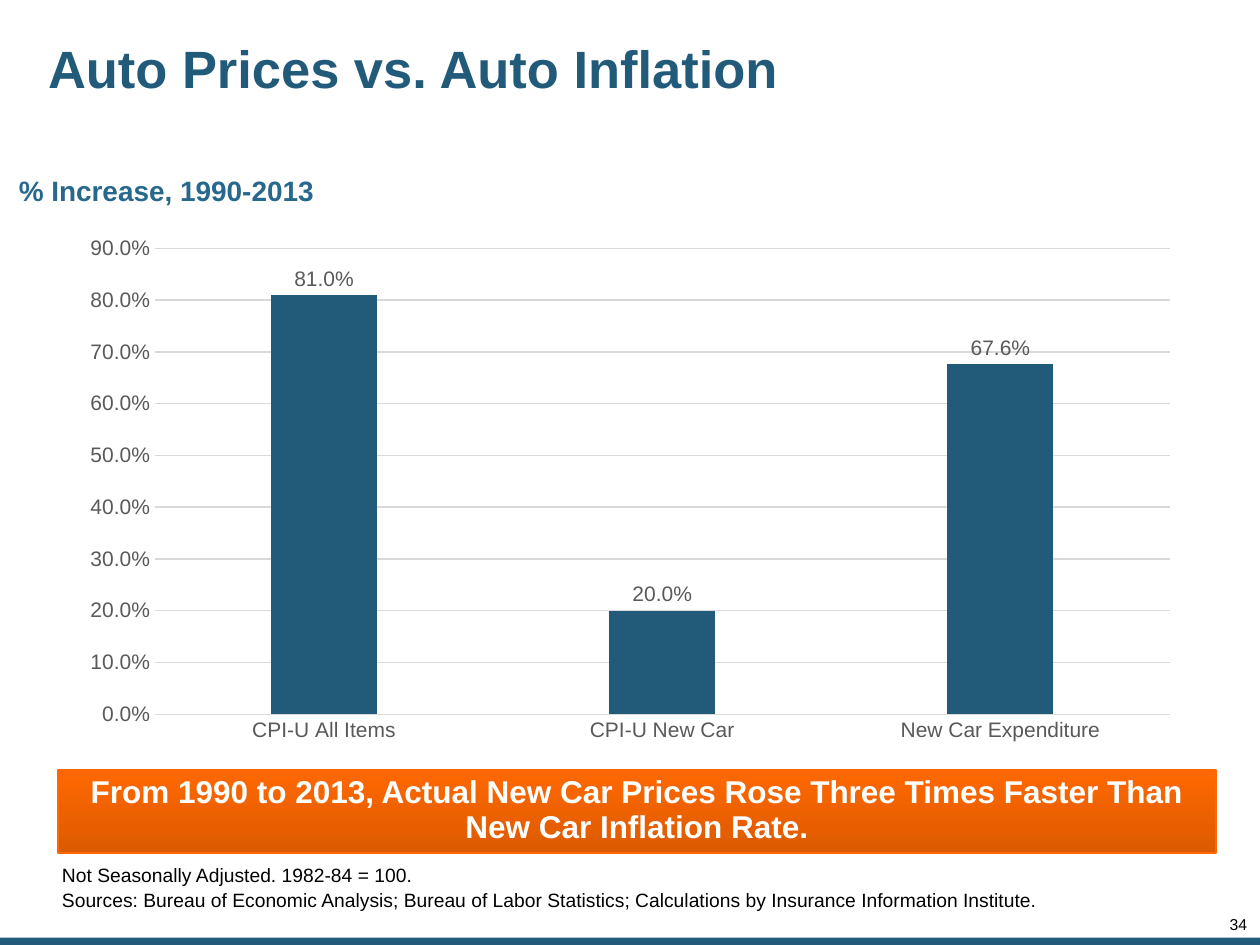
from lxml import etree
from pptx import Presentation
from pptx.chart.data import CategoryChartData
from pptx.dml.color import RGBColor
from pptx.enum.chart import XL_CHART_TYPE, XL_LABEL_POSITION, XL_TICK_MARK
from pptx.enum.shapes import MSO_SHAPE
from pptx.enum.text import MSO_ANCHOR, PP_ALIGN
from pptx.util import Cm, Pt

COLUMNS = XL_CHART_TYPE.COLUMN_CLUSTERED
OUTSIDE = XL_LABEL_POSITION.OUTSIDE_END
NO_TICK = XL_TICK_MARK.NONE
RECTANGLE = MSO_SHAPE.RECTANGLE
TOP, MIDDLE, BOTTOM = MSO_ANCHOR.TOP, MSO_ANCHOR.MIDDLE, MSO_ANCHOR.BOTTOM
LEFT, CENTER, RIGHT = PP_ALIGN.LEFT, PP_ALIGN.CENTER, PP_ALIGN.RIGHT

FONT = "Arial"
BLUE, GRAY, RULE = "225A7A", "595959", "D9D9D9"
ORANGE, DARK_ORANGE = "FF6801", "DC5A01"
PERCENT = "0.0%"

INCREASES = {"CPI-U All Items": 0.81, "CPI-U New Car": 0.2, "New Car Expenditure": 0.676}
CHART_AREA = (1.37, 4.57, 22.66, 10.59)
FOOTER_AREA = (0, 18.9, 25.4, 0.15)
BANNER_AREA = (1.17, 15.52, 23.34, 1.68)
BANNER = {
    "lines": ["From 1990 to 2013, Actual New Car Prices Rose Three Times Faster Than New Car Inflation Rate."],
    "size": 18, "color": "FFFFFF", "bold": True, "anchor": MIDDLE, "align": CENTER,
    "spacing": 0.95, "margins": (0.25, 0.13, 0.25, 0.18),
}
TEXTS = [
    {"area": (0.84, 0.25, 20.55, 2.39), "lines": ["Auto Prices vs. Auto Inflation"],
     "size": 30, "color": BLUE, "bold": True, "anchor": MIDDLE, "align": LEFT,
     "spacing": 0.9, "margins": (0.13, 0.13, 0.13, 0.13)},
    {"area": (0.38, 3.58, 8.69, 0.61), "lines": ["% Increase, 1990-2013"],
     "size": 16, "color": "28688C", "bold": True, "anchor": TOP, "align": LEFT,
     "spacing": 0.9, "margins": (0, 0, 0, 0)},
    {"area": (0.23, 17.45, 24.36, 1.3),
     "lines": ["Not Seasonally Adjusted. 1982-84 = 100.",
               "Sources: Bureau of Economic Analysis; Bureau of Labor Statistics; "
               "Calculations by Insurance Information Institute."],
     "size": 11, "color": "000000", "bold": False, "anchor": BOTTOM, "align": LEFT,
     "spacing": 0.85, "margins": (1.02, 0, 0, 0.38)},
    {"area": (23.9, 18.49, 1.24, 0.33), "lines": ["34"],
     "size": 9, "color": "000000", "bold": False, "anchor": TOP, "align": RIGHT,
     "spacing": 0.85, "margins": (0, 0, 0, 0)},
]


def rgb(value):
    return RGBColor.from_string(value)


def place(area):
    return [Cm(length) for length in area]


def set_font(font, size, color, bold=False):
    for name, value in {"name": FONT, "size": Pt(size), "bold": bold}.items():
        setattr(font, name, value)
    font.color.rgb = rgb(color)


def write(box, text):
    frame = box.text_frame
    frame.word_wrap = True
    frame.vertical_anchor = text["anchor"]
    for side, margin in zip(("left", "top", "right", "bottom"), text["margins"]):
        setattr(frame, f"margin_{side}", Cm(margin))
    for index, line in enumerate(text["lines"]):
        para = frame.add_paragraph() if index else frame.paragraphs[0]
        para.alignment = text["align"]
        para.line_spacing = text["spacing"]
        if index:
            para.space_before = Pt(text["size"] * 0.25)
        span = para.add_run()
        span.text = line
        set_font(span.font, text["size"], text["color"], text["bold"])


def add_rectangle(page, area):
    shape = page.shapes.add_shape(RECTANGLE, *place(area))
    shape.shadow.inherit = False
    return shape


def add_price_chart(page):
    data = CategoryChartData(number_format=PERCENT)
    data.categories = list(INCREASES)
    data.add_series("Series 1", list(INCREASES.values()))
    chart = page.shapes.add_chart(COLUMNS, *place(CHART_AREA), data).chart
    chart.has_legend = False
    chart.has_title = False
    set_font(chart.font, 12, GRAY)

    plot = chart.plots[0]
    plot.gap_width = 219
    plot.overlap = -27
    plot.vary_by_categories = False
    fill = plot.series[0].format.fill
    fill.solid()
    fill.fore_color.rgb = rgb(BLUE)

    plot.has_data_labels = True
    labels = plot.data_labels
    for name, value in {"show_value": True, "position": OUTSIDE,
                        "number_format": PERCENT, "number_format_is_linked": False}.items():
        setattr(labels, name, value)
    set_font(labels.font, 12, GRAY)

    categories, values = chart.category_axis, chart.value_axis
    for axis in (categories, values):
        axis.major_tick_mark = NO_TICK
        axis.minor_tick_mark = NO_TICK
        set_font(axis.tick_labels.font, 12, GRAY)
    for name, value in {"minimum_scale": 0, "maximum_scale": 0.9, "major_unit": 0.1,
                        "has_major_gridlines": True}.items():
        setattr(values, name, value)
    values.tick_labels.number_format = PERCENT
    values.tick_labels.number_format_is_linked = False
    values.format.line.fill.background()
    for line in (categories.format.line, values.major_gridlines.format.line):
        line.color.rgb = rgb(RULE)
        line.width = Pt(0.75)


def main():
    deck = Presentation()
    deck.slide_width, deck.slide_height = Cm(25.4), Cm(19.05)
    page = deck.slides.add_slide(deck.slide_layouts[6])

    footer = add_rectangle(page, FOOTER_AREA)
    footer.fill.solid()
    footer.fill.fore_color.rgb = rgb(BLUE)
    footer.line.fill.background()

    add_price_chart(page)

    banner = add_rectangle(page, BANNER_AREA)
    banner.fill.gradient()
    banner.fill.gradient_angle = 270
    for stop, color in zip(banner.fill.gradient_stops, (ORANGE, DARK_ORANGE)):
        stop.color.rgb = rgb(color)
    banner.line.color.rgb = rgb(ORANGE)
    banner.line.width = Pt(1)
    write(banner, BANNER)

    for text in TEXTS:
        write(page.shapes.add_textbox(*place(text["area"])), text)

    deck.save("out.pptx")


if __name__ == "__main__":
    main()
